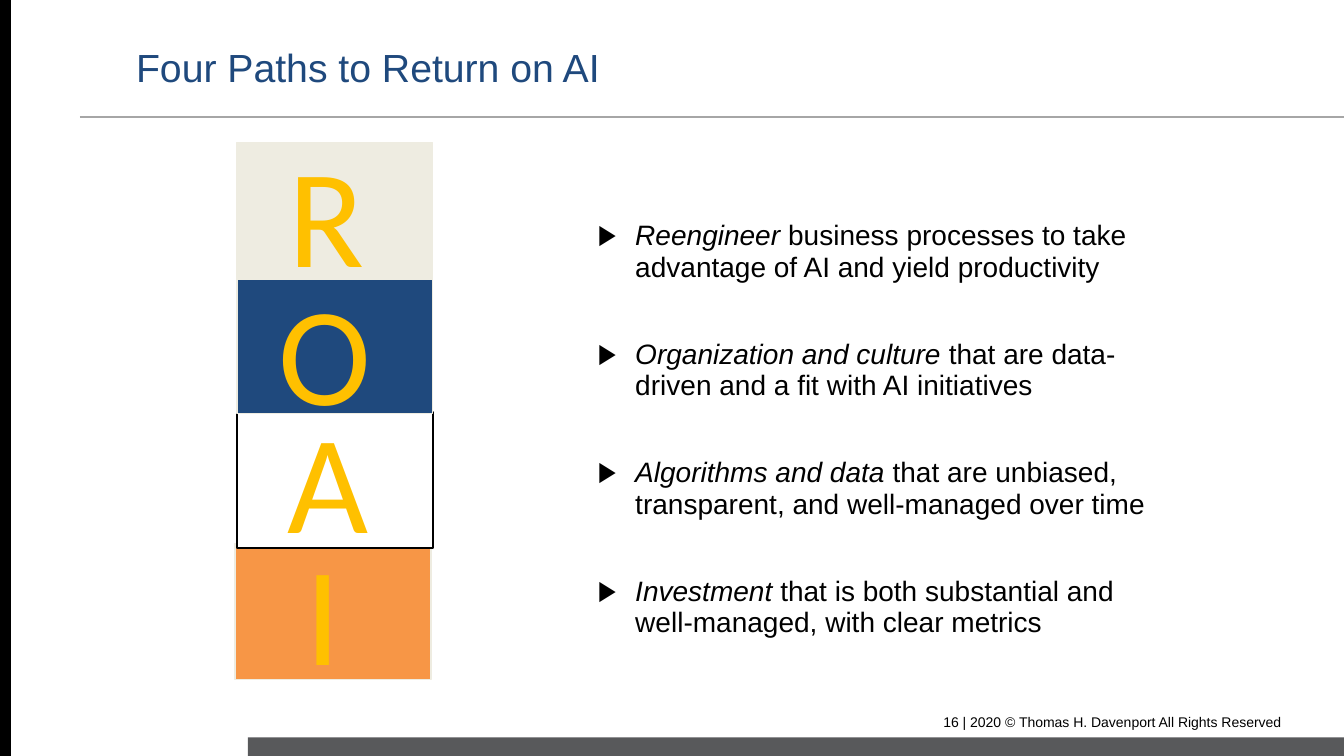
from lxml import etree
from pptx import Presentation
from pptx import util as u
from pptx.dml import color
from pptx.enum import shapes, text
from pptx.oxml import ns

HUES = {
    "black": "000000", "white": "FFFFFF", "navy": "1F497D", "sand": "EEECE1",
    "orange": "F79646", "gold": "FFC000", "rule": "A6A6A6", "slate": "58595B",
}
COLS, ROWS = 160, 90
TILES = [
    ("I", "orange", "sand", 1, (28, 64.7), (35.2, 62)),
    ("A", "white", "black", 1.5, (28.2, 49), (33, 46.3)),
    ("O", "navy", "sand", 1, (28.2, 33), (32, 31)),
    ("R", "sand", "sand", 1, (28.2, 17), (33.2, 14.6)),
]
PATHS = [
    ("Reengineer", " business processes to take advantage of AI and yield productivity"),
    ("Organization and culture ", "that are data-driven and a fit with AI initiatives"),
    ("Algorithms and data ", "that are unbiased, transparent, and well-managed over time"),
    ("Investment", " that is both substantial and well-managed, with clear metrics"),
]


def rgb(hue):
    return color.RGBColor.from_string(HUES[hue])


class Deck:
    def __init__(self):
        self.prs = Presentation()
        self.prs.slide_width = u.Inches(13.33)
        self.prs.slide_height = u.Inches(7.5)
        self.slide = self.prs.slides.add_slide(self.prs.slide_layouts[5])
        self.items = self.slide.shapes

    def cells(self, x, y, w, h):
        col = self.prs.slide_width / COLS
        row = self.prs.slide_height / ROWS
        return int(x * col), int(y * row), int(w * col), int(h * row)

    def style(self, run, size, hue, font="Arial", slant=False):
        run.font.size = u.Pt(size)
        run.font.name = font
        run.font.italic = slant
        run.font.color.rgb = rgb(hue)

    def title(self, words, *area):
        head = self.items.title
        head.left, head.top, head.width, head.height = self.cells(*area)
        frame = head.text_frame
        frame.text = words
        frame.vertical_anchor = text.MSO_ANCHOR.BOTTOM
        frame.auto_size = text.MSO_AUTO_SIZE.NONE
        para = frame.paragraphs[0]
        para.alignment = text.PP_ALIGN.LEFT
        self.style(para.runs[0], 28, "navy")

    def rect(self, fill, *area, edge=None, width=1):
        box = self.items.add_shape(shapes.MSO_SHAPE.RECTANGLE, *self.cells(*area))
        box.shadow.inherit = False
        box.fill.solid()
        box.fill.fore_color.rgb = rgb(fill)
        if edge:
            box.line.color.rgb = rgb(edge)
            box.line.width = u.Pt(width)
        else:
            box.line.fill.background()

    def rule(self, hue, x, y, w):
        left, top, wide, _ = self.cells(x, y, w, 0)
        line = self.items.add_connector(
            shapes.MSO_CONNECTOR.STRAIGHT, left, top, left + wide, top)
        line.line.color.rgb = rgb(hue)
        line.line.width = u.Pt(1.5)
        etree.SubElement(line._element.spPr, ns.qn("a:effectLst"))

    def label(self, words, size, hue, *area, font="Arial", align="LEFT", inset=True):
        frame = self.items.add_textbox(*self.cells(*area)).text_frame
        frame.word_wrap = True
        if not inset:
            frame.margin_left = frame.margin_right = 0
            frame.margin_top = frame.margin_bottom = 0
        frame.text = words
        para = frame.paragraphs[0]
        para.alignment = text.PP_ALIGN[align]
        self.style(para.runs[0], size, hue, font)

    def bullets(self, rows, *area):
        frame = self.items.add_textbox(*self.cells(*area)).text_frame
        frame.word_wrap = True
        for num, parts in enumerate(rows):
            para = frame.add_paragraph() if num else frame.paragraphs[0]
            para.line_spacing = 0.95
            para.space_after = u.Pt(39)
            for part, slant in zip(parts, (True, False)):
                run = para.add_run()
                run.text = part
                self.style(run, 20, "black", slant=slant)
            props = para._p.get_or_add_pPr()
            props.set("marL", str(u.Inches(0.37)))
            props.set("indent", str(-u.Inches(0.37)))
            tint = etree.SubElement(props, ns.qn("a:buClr"))
            etree.SubElement(tint, ns.qn("a:srgbClr"), val=HUES["black"])
            etree.SubElement(props, ns.qn("a:buFont"), typeface="Arial")
            etree.SubElement(props, ns.qn("a:buChar"), char="▶")


def main():
    deck = Deck()
    deck.rect("black", 0, 0, 1.3, ROWS)
    deck.rule("rule", 9.5, 13.9, COLS - 9.5)
    deck.rect("slate", 29.5, 87.8, COLS - 29.5, 2.2)
    deck.title("Four Paths to Return on AI", 15, 6, 123, 5.4)
    for char, fill, edge, width, box, spot in TILES:
        deck.rect(fill, *box, 23.3, 16.2, edge=edge, width=width)
    for char, fill, edge, width, box, spot in TILES:
        deck.label(char, 100, "gold", *spot, 15.8, 21.4, font="Calibri")
    deck.bullets(PATHS, 70, 25.6, 70, 54)
    deck.label("16 | 2020 © Thomas H. Davenport All Rights Reserved", 10, "black",
               90, 85, 62.5, 2, align="RIGHT", inset=False)
    deck.prs.save("out.pptx")


if __name__ == "__main__":
    main()
